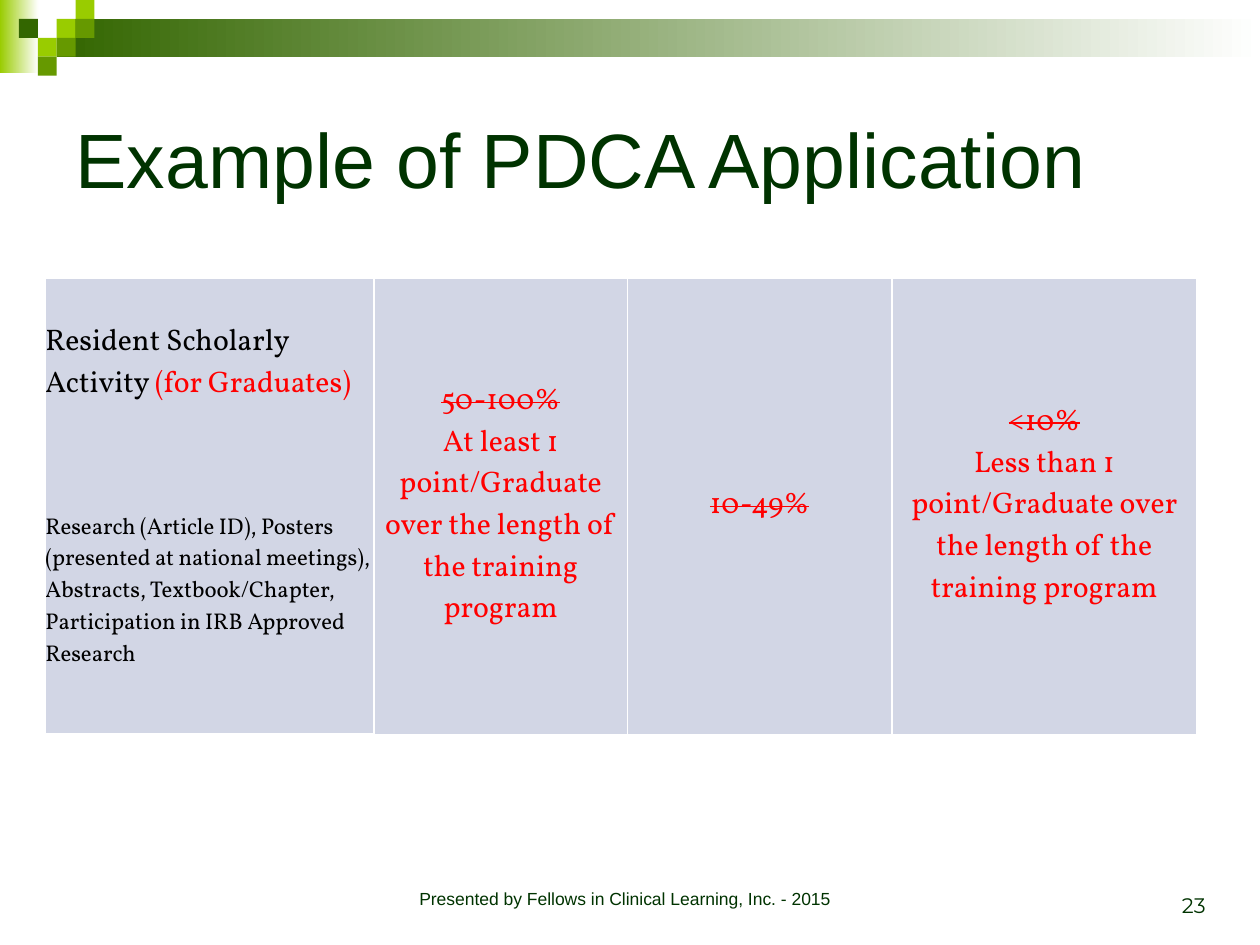
from dataclasses import dataclass

from lxml import etree
from pptx import Presentation
from pptx.dml.color import RGBColor
from pptx.enum import shapes, text
from pptx.oxml.ns import qn
from pptx.util import Pt


@dataclass(frozen=True)
class Theme:
    lime: str = "99CC00"
    green: str = "669900"
    forest: str = "336600"
    heading: str = "003300"
    white: str = "FFFFFF"
    black: str = "000000"
    red: str = "FF0000"
    cell: str = "D2D6E5"
    heading_font: str = "Arial"
    number_font: str = "Montserrat"
    table_font: str = "Vollkorn"
    title_size: float = 44
    table_size: float = 17
    detail_size: float = 13
    number_size: float = 12
    footer_size: float = 10


THEME = Theme()
TILE = 10.8
LEFT, CENTER, RIGHT = (text.PP_ALIGN.LEFT, text.PP_ALIGN.CENTER, text.PP_ALIGN.RIGHT)
MIDDLE = text.MSO_ANCHOR.MIDDLE


def add_text(paragraph, words, *, font, size, color, align=LEFT, strike=False):
    paragraph.alignment = align
    run = paragraph.add_run()
    run.text = words
    run.font.name = font
    run.font.size = Pt(size)
    run.font.color.rgb = RGBColor.from_string(color)
    if strike:
        run.font._element.set("strike", "sngStrike")


def add_block(slide, left, top, width, height, color, fade=False):
    """Add a rectangle, solid or fading to white from left to right."""
    block = slide.shapes.add_shape(
        shapes.MSO_SHAPE.RECTANGLE, Pt(left), Pt(top), Pt(width), Pt(height))
    block.shadow.inherit = False
    block.line.fill.background()
    if fade:
        block.fill.gradient()
        block.fill.gradient_angle = 0
        for stop, stop_color in zip(block.fill.gradient_stops, (color, THEME.white)):
            stop.color.rgb = RGBColor.from_string(stop_color)
    else:
        block.fill.solid()
        block.fill.fore_color.rgb = RGBColor.from_string(color)


def add_banner(slide):
    add_block(slide, 0, 0, 22, 42, THEME.lime, fade=True)
    add_block(slide, 3 * TILE, TILE, 720 - 3 * TILE, 2 * TILE, THEME.forest, fade=True)
    tiles = {
        THEME.lime: [(3, 1), (4, 0), (2, 2)],
        THEME.green: [(4, 1), (3, 2), (2, 3)],
        THEME.forest: [(1, 1)],
    }
    for color, places in tiles.items():
        for column, row in places:
            add_block(slide, column * TILE, row * TILE, TILE, TILE, color)


def add_title(slide, words):
    title = slide.shapes.title
    title.left, title.top, title.width, title.height = Pt(36), Pt(36), Pt(648), Pt(108)
    frame = title.text_frame
    frame.auto_size = text.MSO_AUTO_SIZE.NONE
    frame.vertical_anchor = MIDDLE
    add_text(frame.paragraphs[0], words, font=THEME.heading_font,
             size=THEME.title_size, color=THEME.heading)


def add_label(slide, words, left, top, width, height, anchor, **style):
    box = slide.shapes.add_textbox(Pt(left), Pt(top), Pt(width), Pt(height))
    frame = box.text_frame
    frame.word_wrap = True
    frame.vertical_anchor = anchor
    add_text(frame.paragraphs[0], words, color=THEME.heading, **style)


def format_cell(cell, edges):
    """Fill a cell; draw white borders on the named edges and none elsewhere."""
    cell.margin_left = cell.margin_right = cell.margin_top = cell.margin_bottom = 0
    cell.vertical_anchor = MIDDLE
    properties = cell._tc.get_or_add_tcPr()
    for edge in "LRTB":
        line = etree.SubElement(properties, qn(f"a:ln{edge}"), w=str(Pt(1)))
        if edge in edges:
            fill = etree.SubElement(line, qn("a:solidFill"))
            etree.SubElement(fill, qn("a:srgbClr"), val=THEME.white)
        else:
            etree.SubElement(line, qn("a:noFill"))
    cell.fill.solid()
    cell.fill.fore_color.rgb = RGBColor.from_string(THEME.cell)


def add_target(cell, old, new=None):
    """Write the struck-out target and, below it, the one that replaces it."""
    paragraph = cell.text_frame.paragraphs[0]
    style = dict(font=THEME.table_font, size=THEME.table_size,
                 color=THEME.red, align=CENTER)
    add_text(paragraph, old, strike=True, **style)
    if new:
        paragraph.add_line_break()
        add_text(paragraph, new, **style)


def add_activity_table(slide):
    widths, heights = (187.8, 144.7, 151.2, 174.3), (97.9, 162.7)
    frame = slide.shapes.add_table(
        len(heights), len(widths), Pt(26), Pt(159), Pt(sum(widths)), Pt(sum(heights)))
    table = frame.table
    table.first_row = table.horz_banding = False
    for column, width in zip(table.columns, widths):
        column.width = Pt(width)
    for row, height, edges in zip(table.rows, heights, ("LRT", "LRB")):
        row.height = Pt(height)
        for cell in row.cells:
            format_cell(cell, edges)

    heading = table.cell(0, 0).text_frame.paragraphs[0]
    for words, color in (("Resident Scholarly Activity ", THEME.black),
                         ("(for Graduates)", THEME.red)):
        add_text(heading, words, font=THEME.table_font,
                 size=THEME.table_size, color=color)
    add_text(table.cell(1, 0).text_frame.paragraphs[0],
             "Research (Article ID), Posters (presented at national meetings), "
             "Abstracts, Textbook/Chapter, Participation in IRB Approved Research",
             font=THEME.table_font, size=THEME.detail_size, color=THEME.black)

    goal = "point/Graduate over the length of the training program"
    targets = [("50-100%", f"At least 1 {goal}"),
               ("10-49%", None),
               ("<10%", f"Less than 1 {goal}")]
    for column, (old, new) in enumerate(targets, start=1):
        table.cell(0, column).merge(table.cell(1, column))
        add_target(table.cell(0, column), old, new)


def main():
    presentation = Presentation()
    presentation.slide_width, presentation.slide_height = Pt(720), Pt(540)
    title_only = presentation.slide_layouts[5]
    slide = presentation.slides.add_slide(title_only)
    add_banner(slide)
    add_title(slide, "Example of PDCA Application")
    add_label(slide, "23", 528, 492, 168, 36, text.MSO_ANCHOR.BOTTOM,
              font=THEME.number_font, size=THEME.number_size, align=RIGHT)
    add_label(slide, "Presented by Fellows in Clinical Learning, Inc. - 2015",
              198, 504, 318, 24, text.MSO_ANCHOR.TOP,
              font=THEME.heading_font, size=THEME.footer_size, align=CENTER)
    add_activity_table(slide)
    presentation.save("out.pptx")


if __name__ == "__main__":
    main()
